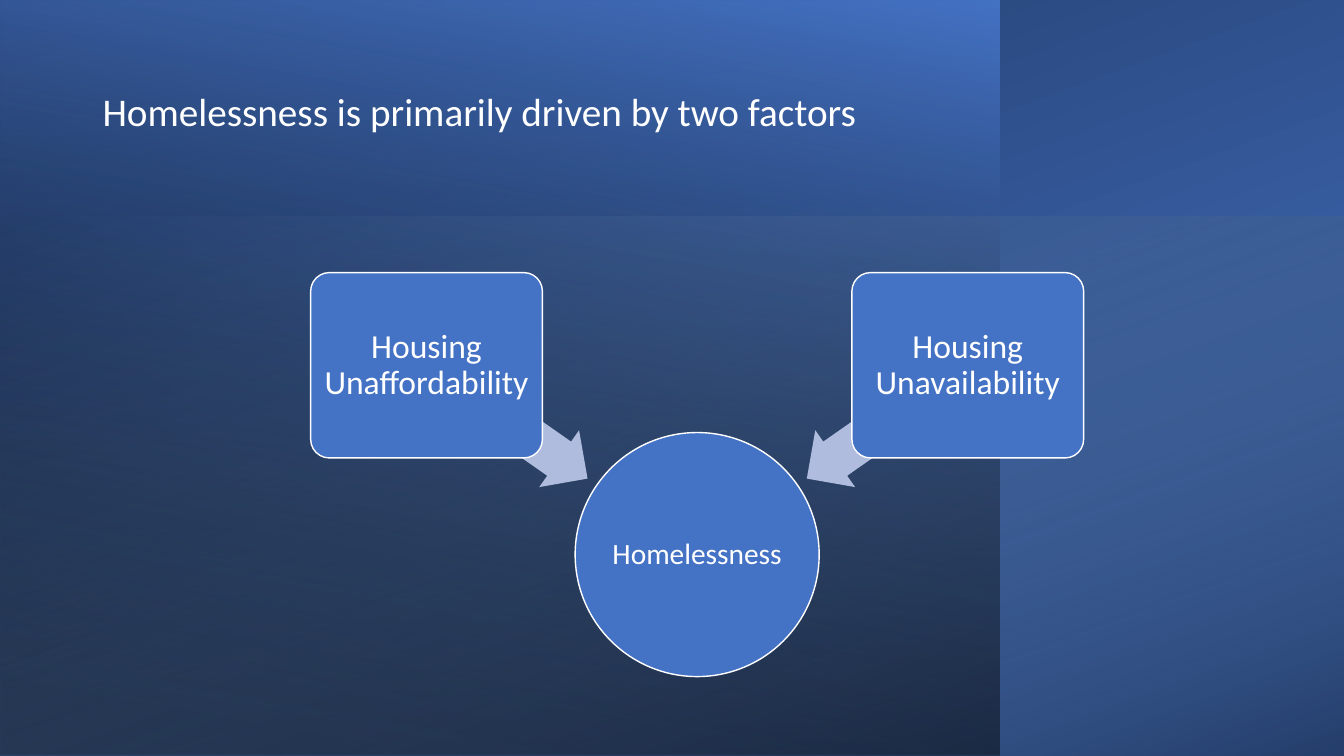
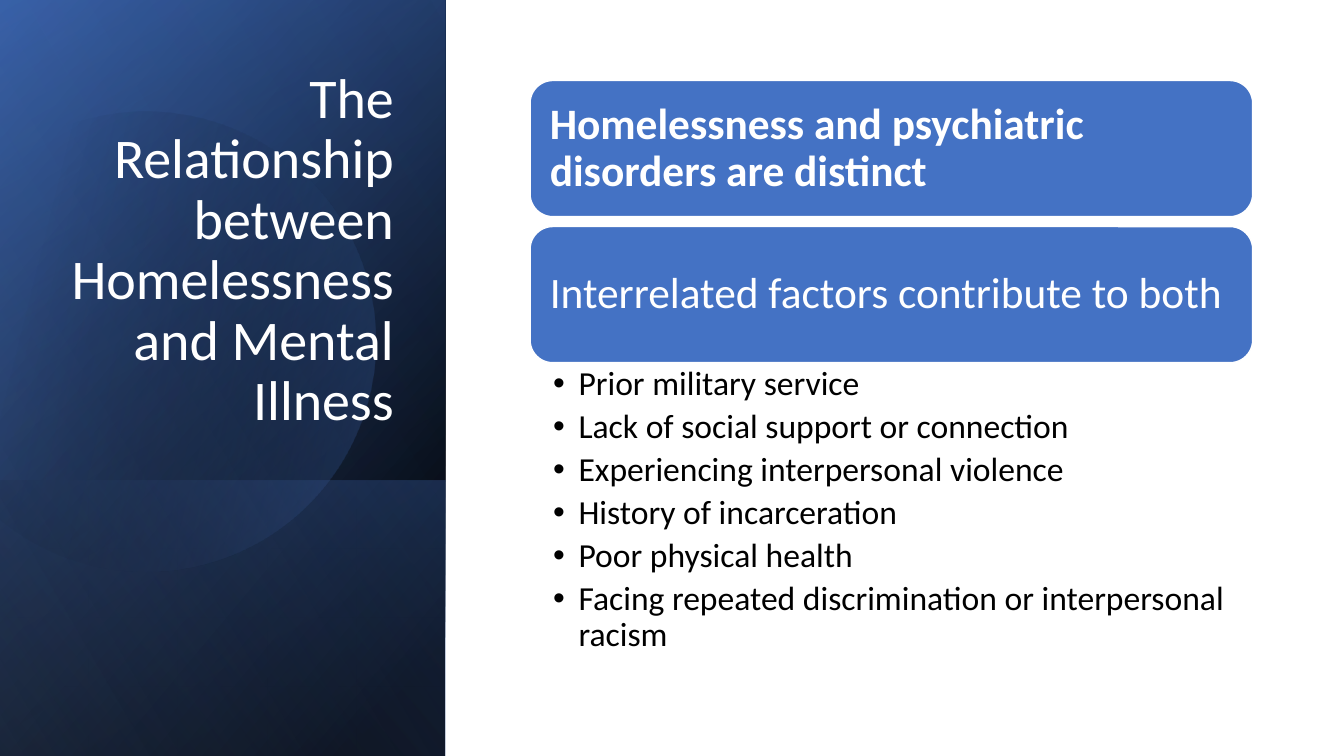
from math import cos, radians, sin, tan

from lxml.etree import SubElement
from pptx import Presentation
from pptx.dml.color import RGBColor
from pptx.enum.shapes import MSO_SHAPE as SHAPE
from pptx.enum.text import MSO_ANCHOR as ANCHOR, MSO_AUTO_SIZE as AUTO_SIZE, PP_ALIGN as ALIGN
from pptx.oxml.ns import qn
from pptx.util import Cm, Pt

# Shared look
FONT = "Calibri"
WHITE, BLACK, BLUE = "FFFFFF", "000000", "4472C4"
NAVY, DEEP_BLUE, PALE_ARROW = "203864", "2F5597", "B0BCDE"
SLIDE_W, SLIDE_H = 33.87, 19.05
TITLE_AND_CONTENT, TITLE_ONLY = 1, 5


def color(hex_value):
    return RGBColor.from_string(hex_value)


def place(shape, left, top, width, height):
    shape.left, shape.top, shape.width, shape.height = map(Cm, (left, top, width, height))


def style_text(shape, size, hex_value, align=ALIGN.LEFT, anchor=ANCHOR.MIDDLE,
               insets=None, bold=False, after=0):
    frame = shape.text_frame
    frame.word_wrap = True
    frame.auto_size = AUTO_SIZE.NONE
    frame.vertical_anchor = anchor
    if insets:
        (frame.margin_left, frame.margin_top,
         frame.margin_right, frame.margin_bottom) = map(Cm, insets)
    for paragraph in frame.paragraphs:
        paragraph.alignment = align
        paragraph.line_spacing = 0.9
        paragraph.space_before = Pt(0)
        paragraph.space_after = Pt(after)
        for run in paragraph.runs:
            run.font.name = FONT
            run.font.size = Pt(size)
            run.font.bold = bold
            run.font.color.rgb = color(hex_value)


def add_solid(slide, kind, box, fill, line=None):
    shape = slide.shapes.add_shape(kind, *map(Cm, box))
    shape.shadow.inherit = False
    shape.fill.solid()
    shape.fill.fore_color.rgb = color(fill)
    if line:
        shape.line.color.rgb = color(line)
        shape.line.width = Pt(1)
    else:
        shape.line.fill.background()
    return shape


def paint_gradient(shape, stops, angle):
    """Two stops of (position %, colour, opacity %); the angle runs clockwise."""
    shape.shadow.inherit = False
    shape.line.fill.background()
    shape.fill.gradient()
    shape.fill.gradient_angle = 360 - angle
    for stop, (position, hex_value, _) in zip(shape.fill.gradient_stops, stops):
        stop.position = position / 100
        stop.color.rgb = color(hex_value)
    gradient = shape._element.spPr.find(qn("a:gradFill"))
    for tint, (_, _, opacity) in zip(gradient.iter(qn("a:srgbClr")), stops):
        SubElement(tint, qn("a:alpha")).set("val", str(opacity * 1000))


def add_panel(slide, box, rotation, stops, angle):
    """Mirrored, turned gradient rectangle that covers the given box."""
    left, top, width, height = box
    if rotation % 180:
        shift = (width - height) / 2
        left, top, width, height = left + shift, top - shift, height, width
    panel = slide.shapes.add_shape(SHAPE.RECTANGLE, *map(Cm, (left, top, width, height)))
    panel.rotation = rotation
    panel._element.spPr.xfrm.set("flipH", "1")
    paint_gradient(panel, stops, angle)


def add_cut_disc(slide, center_x, center_y, radius, angles):
    """Disc closed by a chord; one Bezier curve joins each pair of angles."""
    def rim_point(angle, reach=0):
        a = radians(angle)
        return (Cm(center_x + radius * (cos(a) - reach * sin(a))),
                Cm(center_y + radius * (sin(a) + reach * cos(a))))

    points = []
    for start, end in zip(angles, angles[1:]):
        reach = 4 / 3 * tan(radians(end - start) / 4)
        points += [rim_point(start, reach), rim_point(end, -reach), rim_point(end)]
    outline = slide.shapes.build_freeform(*rim_point(angles[0]))
    outline.add_line_segments(points, close=True)
    disc = outline.convert_to_shape()

    # Turn each three straight segments into one curve
    path_element = next(disc._element.iter(qn("a:path")))
    segments = path_element.findall(qn("a:lnTo"))
    for first in range(0, len(segments), 3):
        curve = SubElement(path_element, qn("a:cubicBezTo"))
        segments[first].addprevious(curve)
        for segment in segments[first:first + 3]:
            curve.append(segment[0])
            path_element.remove(segment)
    return disc


def add_title(slide, text, box, size, **style):
    title = slide.shapes.title
    slide.shapes._spTree.append(title._element)  # bring in front of the panels
    place(title, *box)
    title.text_frame.text = text
    style_text(title, size, WHITE, **style)


def draw_factors(slide, box, factors, outcome):
    """Two factors whose arrows lead down to one outcome."""
    left, top, width, height = box
    axis = left + width / 2
    disc, card_w, card_h = 6.15, 5.84, 4.67
    arrow_w, arrow_h, arrow_reach, arrow_drop = 4.95, 1.75, 4.79, 3.77

    circle = add_solid(slide, SHAPE.OVAL,
                       (axis - disc / 2, top + height - disc, disc, disc), BLUE, WHITE)
    circle.text_frame.text = outcome
    style_text(circle, 21, WHITE, ALIGN.CENTER, insets=(0.03,) * 4)

    for side, factor in zip((-1, 1), factors):
        arrow = add_solid(slide, SHAPE.LEFT_ARROW,
                          (axis + side * arrow_reach - arrow_w / 2,
                           top + arrow_drop - arrow_h / 2, arrow_w, arrow_h), PALE_ARROW)
        arrow.adjustments[0] = 0.6
        arrow.rotation = 270 + side * 55

        card_center = axis + side * (width - card_w) / 2
        card = add_solid(slide, SHAPE.ROUNDED_RECTANGLE,
                         (card_center - card_w / 2, top, card_w, card_h), BLUE, WHITE)
        card.adjustments[0] = 0.1
        card.text_frame.text = factor
        style_text(card, 24, WHITE, ALIGN.CENTER, insets=(0.13,) * 4)


def draw_sidebar(slide, box):
    """Layered dark gradients with a large disc cut at the left edge."""
    left, top, width, height = box
    band_h = 6.95
    band = (left, top + height - band_h, width, band_h)
    add_panel(slide, box, 90, [(8, BLACK, 100), (100, DEEP_BLUE, 100)], 50)
    add_panel(slide, box, 90, [(0, BLACK, 0), (99, BLUE, 46)], 30)
    add_panel(slide, band, 90, [(2, BLUE, 29), (100, BLACK, 30)], 130)

    disc = add_cut_disc(slide, left + 3.65, top + 8.5, 5.8, (-118, -90, 0, 90, 150))
    disc.rotation = 343.9
    paint_gradient(disc, [(29, BLACK, 0), (100, BLUE, 43)], 30)

    add_panel(slide, box, 90, [(0, BLACK, 0), (99, "8FAADC", 11)], 120)


def draw_statements(slide, box, statements, factors):
    """Stacked statement cards with a bulleted list below."""
    left, top, width, height = box
    card_h, pitch = 3.43, 3.68
    for row, (statement, bold) in enumerate(statements):
        card = add_solid(slide, SHAPE.ROUNDED_RECTANGLE,
                         (left, top + row * pitch, width, card_h), BLUE, WHITE)
        card.text_frame.text = statement
        style_text(card, 31, WHITE, insets=(0.33,) * 4, bold=bold)

    list_drop = (len(statements) - 1) * pitch + card_h
    listing = slide.placeholders[1]
    place(listing, left, top + list_drop, width, height - list_drop)
    listing.text_frame.text = "\n".join(factors)
    for paragraph in listing.text_frame.paragraphs:
        properties = paragraph._p.get_or_add_pPr()
        properties.set("marL", str(Cm(0.64)))
        properties.set("indent", str(-Cm(0.64)))
        SubElement(properties, qn("a:buChar")).set("char", "•")
    style_text(listing, 24, BLACK, anchor=ANCHOR.TOP,
               insets=(0.58, 0.1, 0.61, 0.1), after=4.8)


def build_drivers_slide(deck):
    slide = deck.slides.add_slide(deck.slide_layouts[TITLE_ONLY])
    lower_top = 5.46
    add_panel(slide, (0, 0, SLIDE_W, SLIDE_H), 270, [(8, BLUE, 100), (100, NAVY, 100)], 200)
    add_panel(slide, (0, 0, 25.2, SLIDE_H), 180, [(8, BLACK, 52), (100, BLUE, 100)], 80)
    add_panel(slide, (0, lower_top, SLIDE_W, SLIDE_H - lower_top), 270,
              [(0, "9DC3E6", 0), (100, BLACK, 46)], 20)
    add_title(slide, "Homelessness is primarily driven by two factors",
              (2.33, 1.02, 29.2, 3.68), 28)
    draw_factors(slide, (7.83, 6.87, 19.48, 10.18),
                 ["Housing Unaffordability", "Housing Unavailability"], "Homelessness")


def build_relationship_slide(deck):
    slide = deck.slides.add_slide(deck.slide_layouts[TITLE_AND_CONTENT])
    draw_sidebar(slide, (0, 0, 11.22, SLIDE_H))
    add_title(slide, "The Relationship between Homelessness and Mental Illness",
              (1.29, 1.63, 8.89, 9.4), 40, align=ALIGN.RIGHT, anchor=ANCHOR.BOTTOM)
    draw_statements(
        slide, (13.36, 2.03, 18.21, 14.96),
        [("Homelessness and psychiatric disorders are distinct", True),
         ("Interrelated factors contribute to both", False)],
        ["Prior military service",
         "Lack of social support or connection",
         "Experiencing interpersonal violence",
         "History of incarceration",
         "Poor physical health",
         "Facing repeated discrimination or interpersonal racism"])


def main():
    deck = Presentation()
    deck.slide_width, deck.slide_height = Cm(SLIDE_W), Cm(SLIDE_H)
    build_drivers_slide(deck)
    build_relationship_slide(deck)
    deck.save("out.pptx")


if __name__ == "__main__":
    main()
